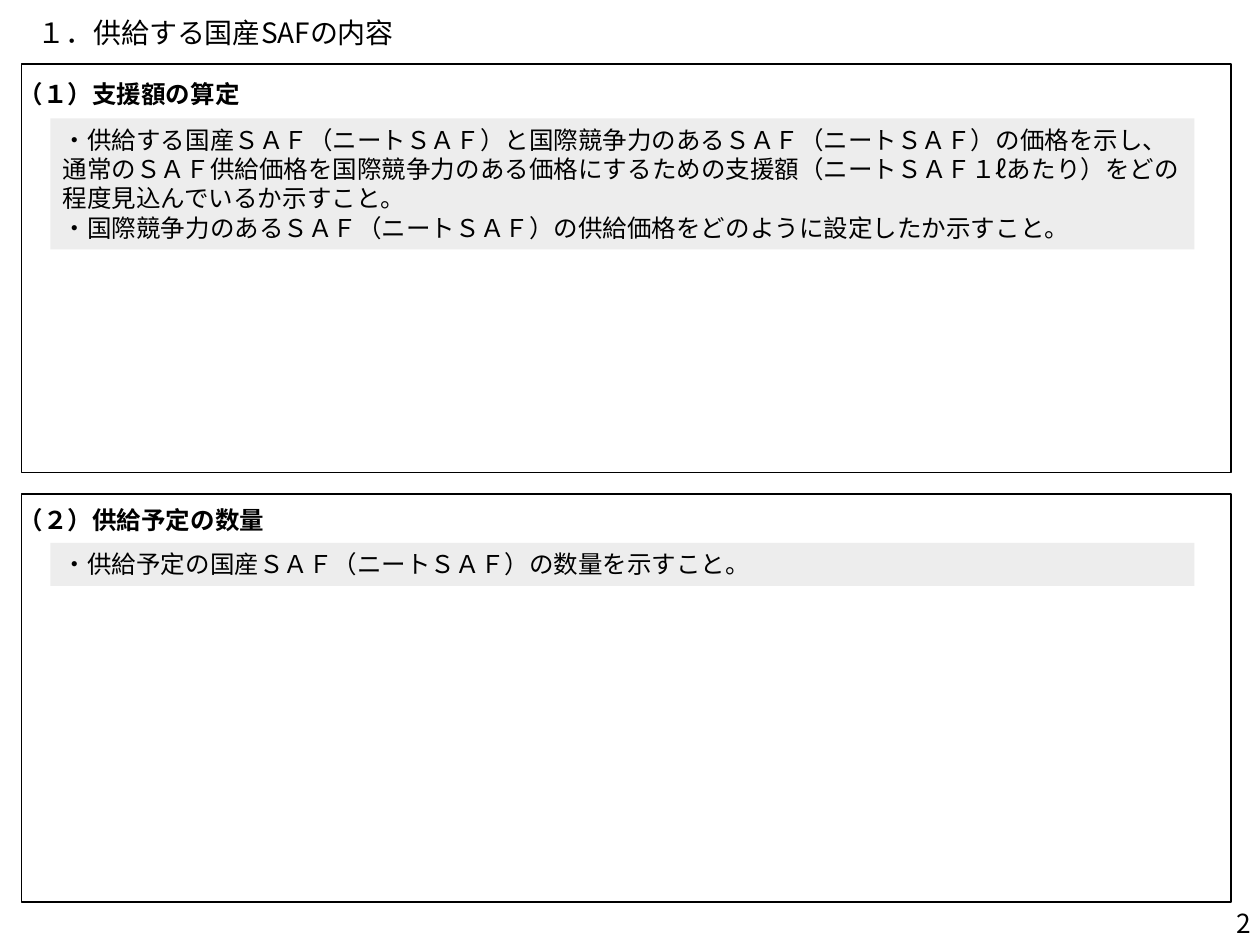
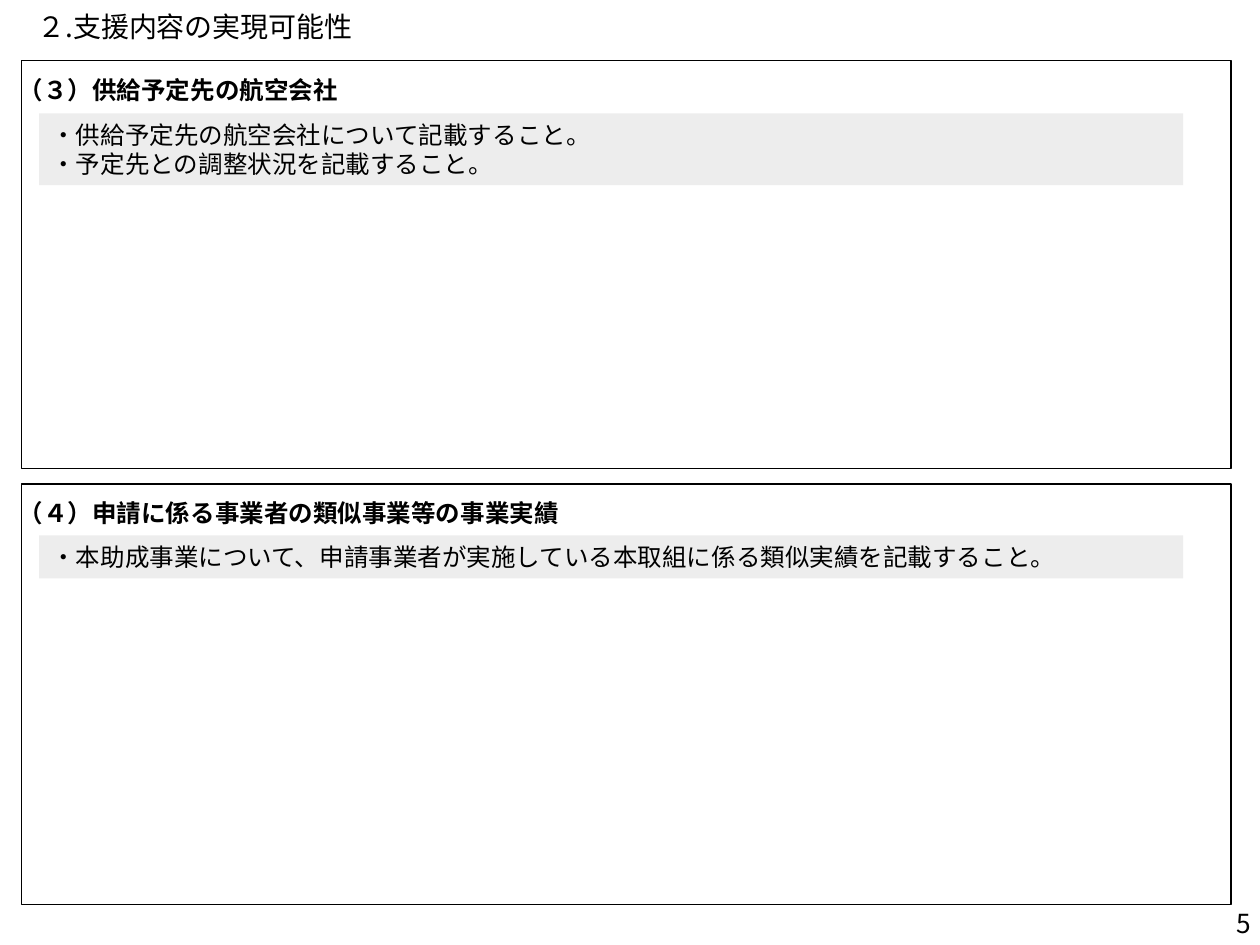
"""Build two application-form slides of outlined sections with shaded guidance notes."""
from dataclasses import dataclass, field

from lxml.etree import SubElement
from pptx import Presentation
from pptx.dml.color import RGBColor as RGB
from pptx.enum.shapes import MSO_SHAPE as SHAPE
from pptx.enum.text import MSO_ANCHOR as ANCHOR, MSO_AUTO_SIZE as FIT, PP_ALIGN as ALIGN
from pptx.oxml.ns import qn
from pptx.shapes.autoshape import Shape
from pptx.slide import Slide
from pptx.util import Emu, Pt

PX = 9144


@dataclass(frozen=True)
class Theme:
    font: str = "Noto Sans CJK JP"
    ink: RGB = field(default_factory=lambda: RGB(0, 0, 0))
    shade: RGB = field(default_factory=lambda: RGB(0xED, 0xED, 0xED))
    title: int = 16
    body: int = 14
    number: int = 15
    line: int = 1


@dataclass(frozen=True)
class Box:
    left: int
    top: int
    width: int
    height: int

    def emu(self) -> list[Emu]:
        return [Emu(v * PX) for v in (self.left, self.top, self.width, self.height)]


@dataclass(frozen=True)
class Section:
    heading: str
    notes: list[str]
    frame_top: int
    frame_height: int
    heading_top: int
    note_top: int
    note_height: int


@dataclass(frozen=True)
class Page:
    number: int
    title: str
    title_box: Box
    note_left: int
    sections: list[Section]


THEME = Theme()
NUMBER_BOX = Box(825, 725, 175, 15)
PAGES = [
    Page(2, "１．供給する国産SAFの内容", Box(20, 6, 668, 42), 40, [
        Section("（１）支援額の算定", [
            "・供給する国産ＳＡＦ（ニートＳＡＦ）と国際競争力のあるＳＡＦ（ニートＳＡＦ）の価格を示し、"
            "通常のＳＡＦ供給価格を国際競争力のある価格にするための支援額（ニートＳＡＦ１ℓあたり）を"
            "どの程度見込んでいるか示すこと。",
            "・国際競争力のあるＳＡＦ（ニートＳＡＦ）の供給価格をどのように設定したか示すこと。",
        ], 51, 324, 58, 94, 104),
        Section("（２）供給予定の数量", [
            "・供給予定の国産ＳＡＦ（ニートＳＡＦ）の数量を示すこと。",
        ], 392, 324, 396, 431, 34),
    ]),
    Page(5, "２.支援内容の実現可能性", Box(20, 5, 944, 36), 31, [
        Section("（３）供給予定先の航空会社", [
            "・供給予定先の航空会社について記載すること。",
            "・予定先との調整状況を記載すること。",
        ], 48, 324, 55, 90, 57),
        Section("（４）申請に係る事業者の類似事業等の事業実績", [
            "・本助成事業について、申請事業者が実施している本取組に係る類似実績を記載すること。",
        ], 384, 334, 390, 425, 34),
    ]),
]


def assign(target: object, values: dict) -> None:
    for name, value in values.items():
        setattr(target, name, value)


def write(sp: Shape, lines: list[str], size: int, bold: bool = False,
          frame: dict | None = None, para: dict | None = None) -> None:
    tf = sp.text_frame
    assign(tf, {"word_wrap": True, "vertical_anchor": ANCHOR.TOP} | (frame or {}))
    for i, line in enumerate(lines):
        p = tf.add_paragraph() if i else tf.paragraphs[0]
        assign(p, {"alignment": ALIGN.LEFT} | (para or {}))
        r = p.add_run()
        r.text = line
        assign(r.font, {"name": THEME.font, "size": Pt(size), "bold": bold})
        r.font.color.rgb = THEME.ink
        SubElement(r.font._element, qn("a:ea"), typeface=THEME.font)


def add_text(s: Slide, box: Box, text: str, size: int, **style) -> None:
    write(s.shapes.add_textbox(*box.emu()), [text], size, **style)


def add_rect(s: Slide, box: Box) -> Shape:
    sp = s.shapes.add_shape(SHAPE.RECTANGLE, *box.emu())
    sp.shadow.inherit = False
    return sp


def add_section(s: Slide, section: Section, note_left: int) -> None:
    grow = {"auto_size": FIT.SHAPE_TO_FIT_TEXT}
    note = add_rect(s, Box(note_left, section.note_top, 908, section.note_height))
    note.fill.solid()
    note.fill.fore_color.rgb = THEME.shade
    note.line.fill.background()
    write(note, section.notes, THEME.body, frame=grow)
    add_text(s, Box(5, section.heading_top, 631, 34), section.heading, THEME.body,
             bold=True, frame=grow)
    outline = add_rect(s, Box(17, section.frame_top, 960, section.frame_height))
    outline.fill.background()
    outline.line.color.rgb = THEME.ink
    outline.line.width = Pt(THEME.line)


def add_page(s: Slide, page: Page) -> None:
    middle = {"vertical_anchor": ANCHOR.MIDDLE}
    side, edge = Emu(7 * PX), Emu(4 * PX)
    insets = {"margin_left": side, "margin_right": side,
              "margin_top": edge, "margin_bottom": edge}
    add_text(s, page.title_box, page.title, THEME.title, frame=middle,
             para={"line_spacing": 0.9})
    for section in page.sections:
        add_section(s, section, page.note_left)
    add_text(s, NUMBER_BOX, str(page.number), THEME.number, frame=middle | insets,
             para={"alignment": ALIGN.RIGHT})


def main() -> None:
    prs = Presentation()
    assign(prs, {"slide_width": Emu(1000 * PX), "slide_height": Emu(750 * PX)})
    for page in PAGES:
        add_page(prs.slides.add_slide(prs.slide_layouts[6]), page)
    prs.save("out.pptx")


if __name__ == "__main__":
    main()
